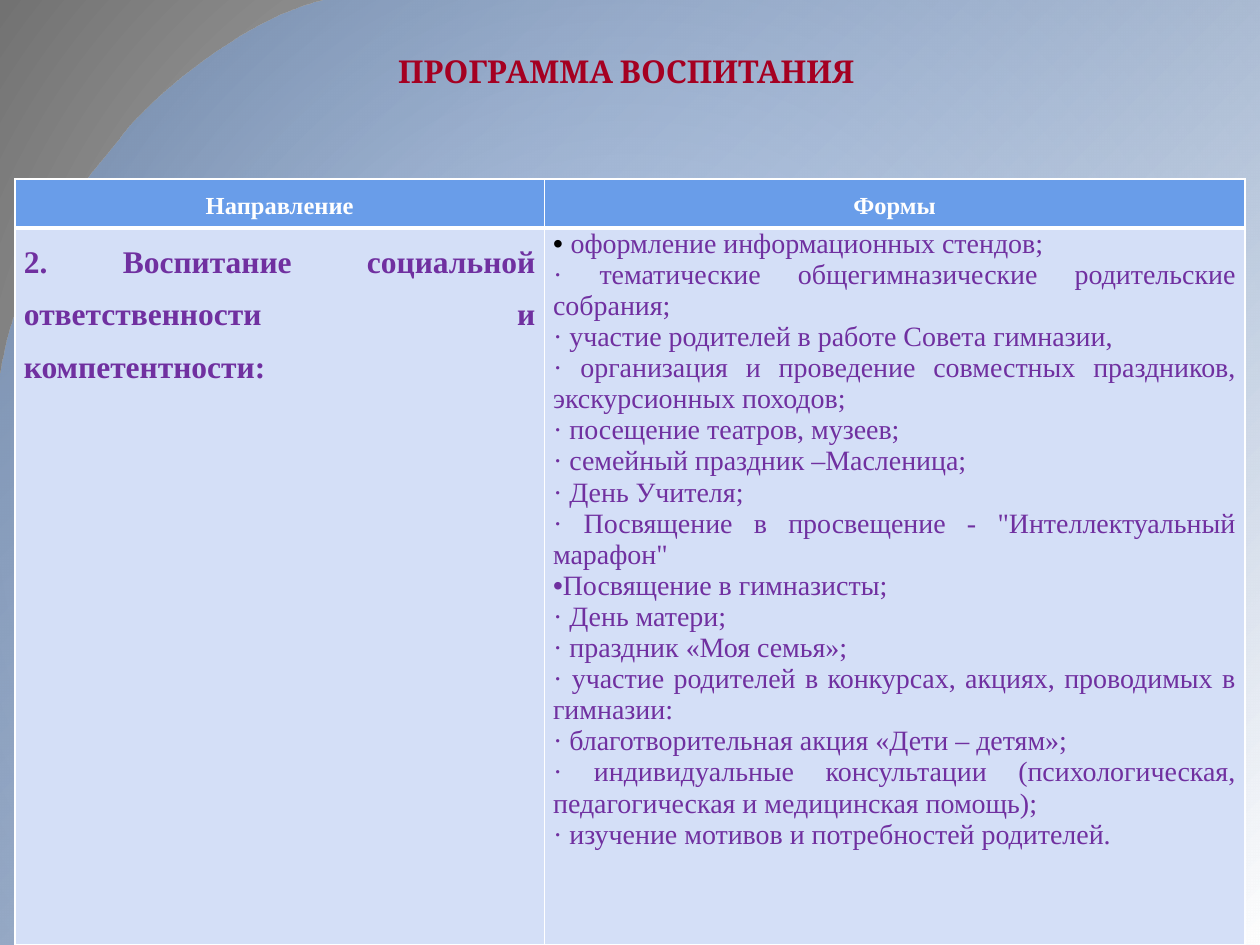
from dataclasses import dataclass
from lxml.etree import SubElement
from pptx import Presentation
from pptx.dml.color import RGBColor as RGB
from pptx.enum.text import MSO_ANCHOR as Anchor, PP_ALIGN as Align
from pptx.oxml import parse_xml
from pptx.oxml.ns import nsdecls, qn
from pptx.util import Inches, Pt


@dataclass
class Theme:
    title: RGB = RGB.from_string("A50021")
    text: RGB = RGB.from_string("7030A0")
    header: RGB = RGB.from_string("699DE9")
    body: RGB = RGB.from_string("D4DFF7")
    white: RGB = RGB.from_string("FFFFFF")
    black: RGB = RGB.from_string("000000")
    back_inner: str = "CFCFCF"
    back_outer: str = "727272"
    title_font: str = "Cambria"
    font: str = "Times New Roman"
    bullet_font: str = "Arial"
    large: int = 18
    medium: int = 16
    small: int = 14


def gradient(stops, direction):
    gs = "".join(
        f'<a:gs pos="{pos * 1000}"><a:srgbClr val="{color}">'
        f'<a:alpha val="{alpha * 1000}"/></a:srgbClr></a:gs>'
        for pos, color, alpha in stops)
    return parse_xml(f'<a:gradFill {nsdecls("a")} rotWithShape="1">'
                     f'<a:gsLst>{gs}</a:gsLst>{direction}</a:gradFill>')


def style(r, size, color, font, bold=False):
    r.font.size = Pt(size)
    r.font.color.rgb = color
    r.font.name = font
    r.font.bold = bold


theme = Theme()
prs = Presentation()
prs.slide_width, prs.slide_height = Inches(10), Inches(7.5)
s = prs.slides.add_slide(prs.slide_layouts[5])

s.background.fill.solid()
bg_fill = next(s.element.iter(qn("a:solidFill")))
bg_fill.getparent().replace(bg_fill, gradient(
    [(0, theme.back_inner, 100), (100, theme.back_outer, 100)],
    '<a:path path="circle"><a:fillToRect l="50000" t="50000" '
    'r="50000" b="50000"/></a:path>'))

curves = [
    [(2.58, 0), (1.9, 0.16), (1.16, 0.83), (0.98, 1.07)],
    [(0.98, 1.07), (0.8, 1.32), (0.16, 1.94), (0, 3.01)],
]
steps = 24
outline = []
for a, b, c, d in curves:
    for i in range(1, steps + 1):
        t = i / steps
        u = 1 - t
        outline.append(tuple(
            Inches(u**3 * a[k] + 3 * u * u * t * b[k] + 3 * u * t * t * c[k] + t**3 * d[k])
            for k in (0, 1)))
outline += [(Inches(x), Inches(y)) for x, y in [(0, 7.5), (10, 7.5), (10, 0)]]
builder = s.shapes.build_freeform(Inches(2.58), 0)
builder.add_line_segments(outline, close=True)
wave = builder.convert_to_shape()
wave.shadow.inherit = False
wave.line.fill.background()
wave.fill.solid()
wave_fill = wave.element.spPr.find(qn("a:solidFill"))
wave.element.spPr.replace(wave_fill, gradient(
    [(0, theme.header, 39), (100, theme.white, 100)],
    '<a:lin ang="2700000" scaled="0"/>'))

title = s.shapes.title
title.left, title.top = Inches(0.5), Inches(0.25)
title.width, title.height = Inches(9), Inches(0.62)
title.element.addprevious(wave.element)
tf = title.text_frame
tf.text = "ПРОГРАММА ВОСПИТАНИЯ "
tf.vertical_anchor = Anchor.MIDDLE
p = tf.paragraphs[0]
p.alignment = Align.CENTER
style(p.runs[0], theme.large, theme.title, theme.title_font, True)

table = s.shapes.add_table(2, 2, Inches(0.12), Inches(1.42), Inches(9.76), Inches(6.08)).table
for column, width in zip(table.columns, (4.2, 5.56)):
    column.width = Inches(width)
for row, height in zip(table.rows, (0.39, 5.69)):
    row.height = Inches(height)

forms = [
    "• оформление информационных стендов;",
    "· тематические общегимназические родительские собрания;",
    "· участие родителей в работе Совета гимназии, ",
    "· организация и проведение совместных праздников, экскурсионных походов;",
    "· посещение театров, музеев;",
    "· семейный праздник –Масленица;",
    "· День Учителя;",
    '· Посвящение в просвещение - "Интеллектуальный марафон"',
    "Посвящение в гимназисты;",
    "· День матери;",
    "· праздник «Моя семья»;",
    "· участие родителей в конкурсах, акциях, проводимых в гимназии:",
    "· благотворительная акция «Дети – детям»;",
    "· индивидуальные консультации (психологическая, педагогическая и медицинская помощь);",
    "· изучение мотивов и потребностей родителей.",
]
direction = "2. Воспитание социальной ответственности и компетентности:"
cells = [
    (0, 0, ["Направление"], theme.small, theme.white, True),
    (0, 1, ["Формы"], theme.small, theme.white, True),
    (1, 0, [direction], theme.large, theme.text, True),
    (1, 1, forms, theme.medium, theme.text, False),
]
for row, col, lines, size, color, bold in cells:
    cell = table.cell(row, col)
    cell.margin_left = cell.margin_right = Inches(0.07)
    cell.margin_top = cell.margin_bottom = 0
    tcPr = cell._tc.get_or_add_tcPr()
    for side in ("lnL", "lnR", "lnT", "lnB"):
        weight = 3 if row == 0 and side == "lnB" else 1
        ln = SubElement(tcPr, qn(f"a:{side}"), w=str(Pt(weight)))
        SubElement(SubElement(ln, qn("a:solidFill")), qn("a:srgbClr"), val=str(theme.white))
    cell.fill.solid()
    cell.fill.fore_color.rgb = theme.body if row else theme.header
    tf = cell.text_frame
    tf.text = "\n".join(lines)
    for p in tf.paragraphs:
        p.alignment = Align.JUSTIFY if row else Align.CENTER
        p.line_spacing = 1.5 if bold else 1.0
        r = p.runs[0]
        style(r, size, color, theme.font, bold)
        if r.text.startswith("•"):
            rest = r.text[2:]
            r.text = "• "
            style(r, size, theme.black, theme.bullet_font)
            r = p.add_run()
            r.text = rest
            style(r, size, color, theme.font)
        elif row and not bold and not r.text.startswith("·"):
            pPr = p._p.get_or_add_pPr()
            pPr.set("marL", "0")
            pPr.set("indent", str(-Inches(0.38)))
            SubElement(pPr, qn("a:buFont"), typeface=theme.bullet_font)
            SubElement(pPr, qn("a:buChar"), char="•")

prs.save("out.pptx")
